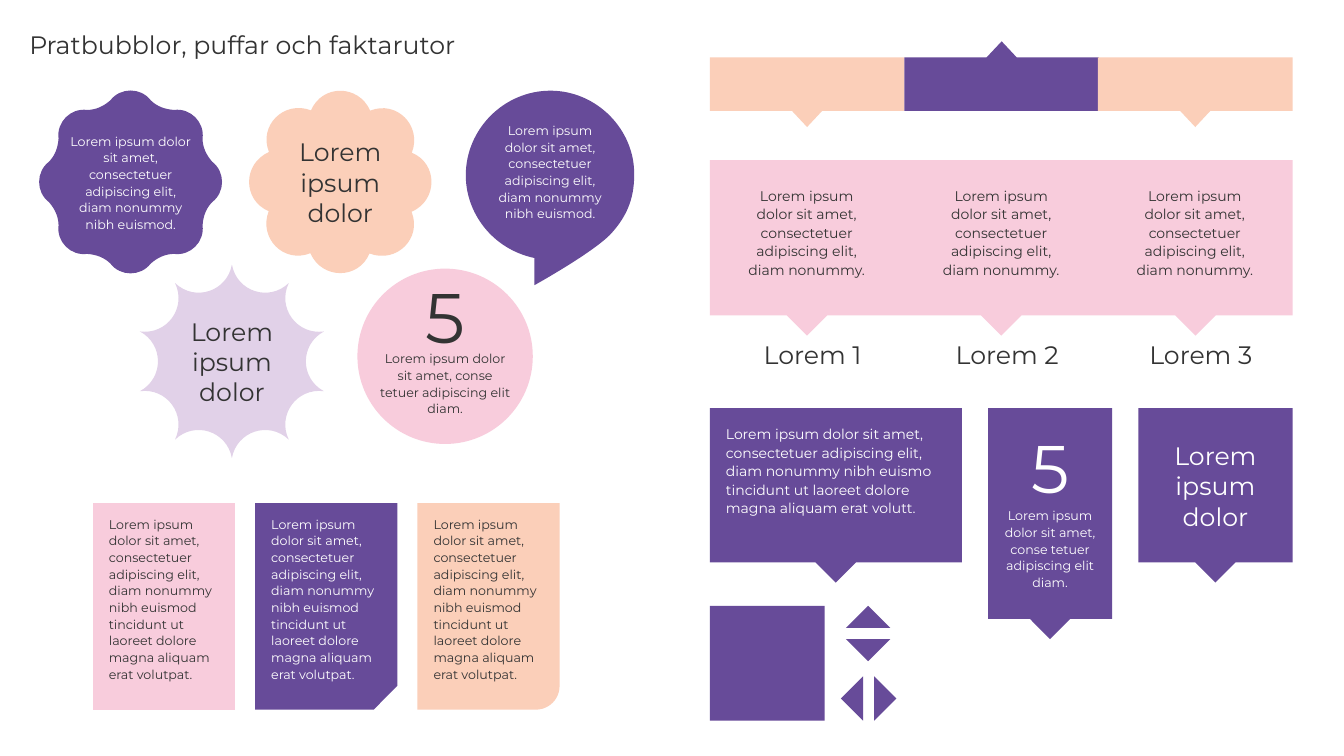
from dataclasses import dataclass
from math import cos, radians, sin
from typing import Optional

from lxml.etree import SubElement
from pptx import Presentation
from pptx.dml.color import RGBColor
from pptx.enum.shapes import MSO_SHAPE
from pptx.enum.text import MSO_ANCHOR, MSO_AUTO_SIZE, PP_ALIGN
from pptx.oxml.ns import qn
from pptx.util import Emu, Pt

RECTANGLE, TRIANGLE = MSO_SHAPE.RECTANGLE, MSO_SHAPE.ISOSCELES_TRIANGLE
SNIPPED, ROUNDED = MSO_SHAPE.SNIP_1_RECTANGLE, MSO_SHAPE.ROUND_1_RECTANGLE
LEFT, CENTER = PP_ALIGN.LEFT, PP_ALIGN.CENTER
TOP, MIDDLE = MSO_ANCHOR.TOP, MSO_ANCHOR.MIDDLE

PX = 9144
FONT = "Montserrat"
PURPLE, PEACH, PINK, LILAC = "674B99", "FBCFB9", "F8CCDC", "E1D1E8"
DARK, WHITE = "333333", "FFFFFF"
PANEL_WIDTH = 578

HEADLINE = "Lorem ipsum dolor"
SENTENCE = "Lorem ipsum dolor sit amet, consectetuer adipiscing elit, diam nonummy"
SHORT_FACT = SENTENCE + " nibh euismod."
LONG_FACT = SENTENCE + " nibh euismod tincidunt ut laoreet dolore magna aliquam erat volutpat."
WIDE_FACT = SENTENCE + " nibh euismo tincidunt ut laoreet dolore magna aliquam erat volutt."
NUMBER_FACT = "Lorem ipsum dolor sit amet, conse tetuer adipiscing elit diam."

Point = tuple[float, float]
Insets = tuple[int, int, int, int]
BADGE_INSETS = (28, 8, 28, 8)
CARD_INSETS = (16, 12, 16, 16)


@dataclass(frozen=True)
class Box:
    left: int
    top: int
    width: int
    height: int

    def emu(self) -> list[Emu]:
        return [Emu(n * PX) for n in (self.left, self.top, self.width, self.height)]

    def corners(self) -> list[Point]:
        right, bottom = self.left + self.width, self.top + self.height
        return [(self.left, self.top), (right, self.top), (right, bottom), (self.left, bottom)]


@dataclass(frozen=True)
class Badge:
    box: Box
    motif: list[Point]
    copies: int
    fill: str
    text: str
    size: int
    colour: str
    spacing: float


@dataclass(frozen=True)
class Card:
    corner: MSO_SHAPE
    fill: str
    colour: str


@dataclass(frozen=True)
class Callout:
    box: Box
    fill: str
    half: int = 20
    depth: int = 20
    tips: int = 1
    upward: bool = False


def rgb(value: str) -> RGBColor:
    return RGBColor.from_string(value)


def paint(shape, fill: Optional[str]):
    shape.shadow.inherit = False
    if fill:
        shape.fill.solid()
        shape.fill.fore_color.rgb = rgb(fill)
    else:
        shape.fill.background()
    shape.line.fill.background()
    return shape


def add_preset(parent, preset: MSO_SHAPE, box: Box, fill: str, rotation: int = 0):
    shape = paint(parent.shapes.add_shape(preset, *box.emu()), fill)
    shape.rotation = rotation
    return shape


def add_outline(parent, points: list[Point], fill: Optional[str] = None):
    scaled = [(round(x * PX), round(y * PX)) for x, y in points]
    builder = parent.shapes.build_freeform(*scaled[0], scale=1.0)
    builder.add_line_segments(scaled[1:], close=True)
    return paint(builder.convert_to_shape(), fill)


def add_curved(parent, box: Box, knots: list[Point], fill: str):
    shape = add_outline(parent, box.corners(), fill)
    contour = next(shape.element.iter(qn("a:path")))
    for command in list(contour):
        contour.remove(command)
    segments = [("a:moveTo", knots[:1])]
    segments += [("a:cubicBezTo", knots[i:i + 3]) for i in range(1, len(knots), 3)]
    for tag, points in segments:
        command = SubElement(contour, qn(tag))
        for x, y in points:
            SubElement(command, qn("a:pt"), x=str(round((x - box.left) * PX)),
                       y=str(round((y - box.top) * PX)))
    SubElement(contour, qn("a:close"))
    return shape


def write(shape, text: str, *, size: int, colour: str = DARK, align: PP_ALIGN = CENTER,
          anchor: MSO_ANCHOR = TOP, spacing: float = 1.0, insets: Insets = (10, 5, 10, 5)) -> None:
    frame = shape.text_frame
    frame.word_wrap = True
    frame.auto_size = MSO_AUTO_SIZE.NONE
    frame.vertical_anchor = anchor
    (frame.margin_left, frame.margin_top,
     frame.margin_right, frame.margin_bottom) = [Emu(n * PX) for n in insets]
    paragraph = frame.add_paragraph() if frame.text else frame.paragraphs[0]
    paragraph.alignment = align
    paragraph.line_spacing = spacing
    run = paragraph.add_run()
    run.text = text
    run.font.name = FONT
    run.font.size = Pt(size)
    run.font.color.rgb = rgb(colour)


def ring(box: Box, motif: list[Point], copies: int) -> list[Point]:
    center_x, center_y = box.left + box.width / 2, box.top + box.height / 2
    knots = []
    for copy_index in range(copies):
        angle = radians(360 / copies * copy_index)
        knots += [(center_x + x * cos(angle) - y * sin(angle),
                   center_y + x * sin(angle) + y * cos(angle)) for x, y in motif]
    return knots + knots[:1]


def add_callout(parent, callout: Callout):
    box = callout.box
    left_top, right_top, right_bottom, left_bottom = box.corners()
    bottom = box.top + box.height
    points = [right_bottom, right_top, left_top, left_bottom]
    for index in range(callout.tips):
        x = box.left + box.width * (index + 0.5) / callout.tips
        points += [(x - callout.half, bottom), (x, bottom + callout.depth), (x + callout.half, bottom)]
    if callout.upward:
        points = [(x, box.top + bottom - y) for x, y in points]
    return add_outline(parent, points, callout.fill)


def add_badges(slide) -> None:
    wavy = [(-20, -81), (-10, -94), (10, -94), (20, -81), (26, -75), (34, -72)]
    flower = [(-29, -71), (-18, -97), (18, -97)]
    burst = [(0, -96), (5, -69), (37, -59)]
    badges = [
        Badge(Box(39, 90, 181, 181), wavy, 8, PURPLE, SHORT_FACT, 9, WHITE, 1.1),
        Badge(Box(247, 90, 181, 181), flower, 8, PEACH, HEADLINE, 18, DARK, 1.0),
        Badge(Box(139, 263, 182, 191), burst, 10, LILAC, HEADLINE, 18, DARK, 1.0),
    ]
    for badge in badges:
        outline = add_curved(slide, badge.box, ring(badge.box, badge.motif, badge.copies), badge.fill)
        write(outline, badge.text, size=badge.size, colour=badge.colour, anchor=MIDDLE,
              spacing=badge.spacing, insets=BADGE_INSETS)

    bubble_knots = [(530, 283), (530, 283), (586, 252), (605, 233), (621, 216), (629, 198),
                    (629, 174), (630, 129), (592, 90), (546, 90), (500, 90), (462, 128),
                    (462, 174), (462, 211), (488, 247), (530, 256), (530, 265), (530, 274), (530, 283)]
    bubble = add_curved(slide, Box(462, 90, 167, 193), bubble_knots, PURPLE)
    write(bubble, SHORT_FACT, size=9, colour=WHITE, anchor=MIDDLE, spacing=1.1,
          insets=(28, 8, 28, 41))

    circle_box = Box(355, 267, 173, 173)
    circle = add_curved(slide, circle_box, ring(circle_box, [(0, -87), (48, -87), (87, -48)], 4), PINK)
    for text, size, spacing in (("5", 50, 0.4), (NUMBER_FACT, 9, 1.1)):
        write(circle, text, size=size, anchor=MIDDLE, spacing=spacing, insets=(20, 28, 20, 8))


def add_cards(slide) -> None:
    cards = [Card(RECTANGLE, PINK, DARK), Card(SNIPPED, PURPLE, WHITE), Card(ROUNDED, PEACH, DARK)]
    for index, card in enumerate(cards):
        box = Box(92 + 161 * index, 499, 141, 205)
        if card.corner == RECTANGLE:
            body = add_outline(slide, box.corners(), card.fill)
        else:
            group = slide.shapes.add_group_shape()
            shift = (box.height - box.width) // 2
            turned = Box(box.left - shift, box.top + shift, box.height, box.width)
            add_preset(group, card.corner, turned, card.fill, rotation=90)
            body = add_outline(group, box.corners())
        write(body, LONG_FACT, size=9, colour=card.colour, align=LEFT, spacing=1.1,
              insets=CARD_INSETS)


def add_columns(slide) -> None:
    add_callout(slide, Callout(Box(704, 159, PANEL_WIDTH, 154), PINK, tips=3))
    for index, fill in enumerate((PEACH, PURPLE, PEACH)):
        offset = round(PANEL_WIDTH * index / 3)
        add_callout(slide, Callout(Box(704 + offset, 57, 193, 53), fill, half=15,
                                   depth=16, upward=fill == PURPLE))
        column = add_outline(slide, Box(723 + offset, 160, 154, 152).corners())
        write(column, SENTENCE + ".", size=10, spacing=1.1, insets=(16, 24, 16, 16))
        label = slide.shapes.add_textbox(*Box(729 + offset, 332, 154, 40).emu())
        write(label, f"Lorem {index + 1}", size=18)


def add_fact_boxes(slide) -> None:
    wide = add_callout(slide, Callout(Box(704, 405, 250, 153), PURPLE))
    write(wide, WIDE_FACT, size=10, colour=WHITE, align=LEFT, spacing=1.1, insets=(16, 16, 16, 16))
    number = add_callout(slide, Callout(Box(980, 405, 123, 209), PURPLE))
    for text, size, spacing in (("5", 48, 0.8), (NUMBER_FACT, 9, 1.1)):
        write(number, text, size=size, colour=WHITE, anchor=MIDDLE, spacing=spacing,
              insets=(10, 5, 10, 20))
    headline = add_callout(slide, Callout(Box(1129, 405, 153, 153), PURPLE))
    write(headline, HEADLINE, size=18, colour=WHITE, anchor=MIDDLE, insets=(16, 16, 16, 35))

    add_preset(slide, RECTANGLE, Box(704, 601, 114, 114), PURPLE)
    for left, top, rotation in ((839, 601, 0), (839, 634, 180), (856, 682, 90), (823, 682, 270)):
        add_preset(slide, TRIANGLE, Box(left, top, 44, 22), PURPLE, rotation)


def main() -> None:
    deck = Presentation()
    deck.slide_width, deck.slide_height = Emu(1333 * PX), Emu(750 * PX)
    slide = deck.slides.add_slide(deck.slide_layouts[5])
    title = slide.shapes.title
    title.left, title.top, title.width, title.height = Box(19, 24, 1285, 40).emu()
    write(title, "Pratbubblor, puffar och faktarutor", size=18, align=LEFT)
    for add_part in (add_badges, add_cards, add_columns, add_fact_boxes):
        add_part(slide)
    deck.save("out.pptx")


if __name__ == "__main__":
    main()
